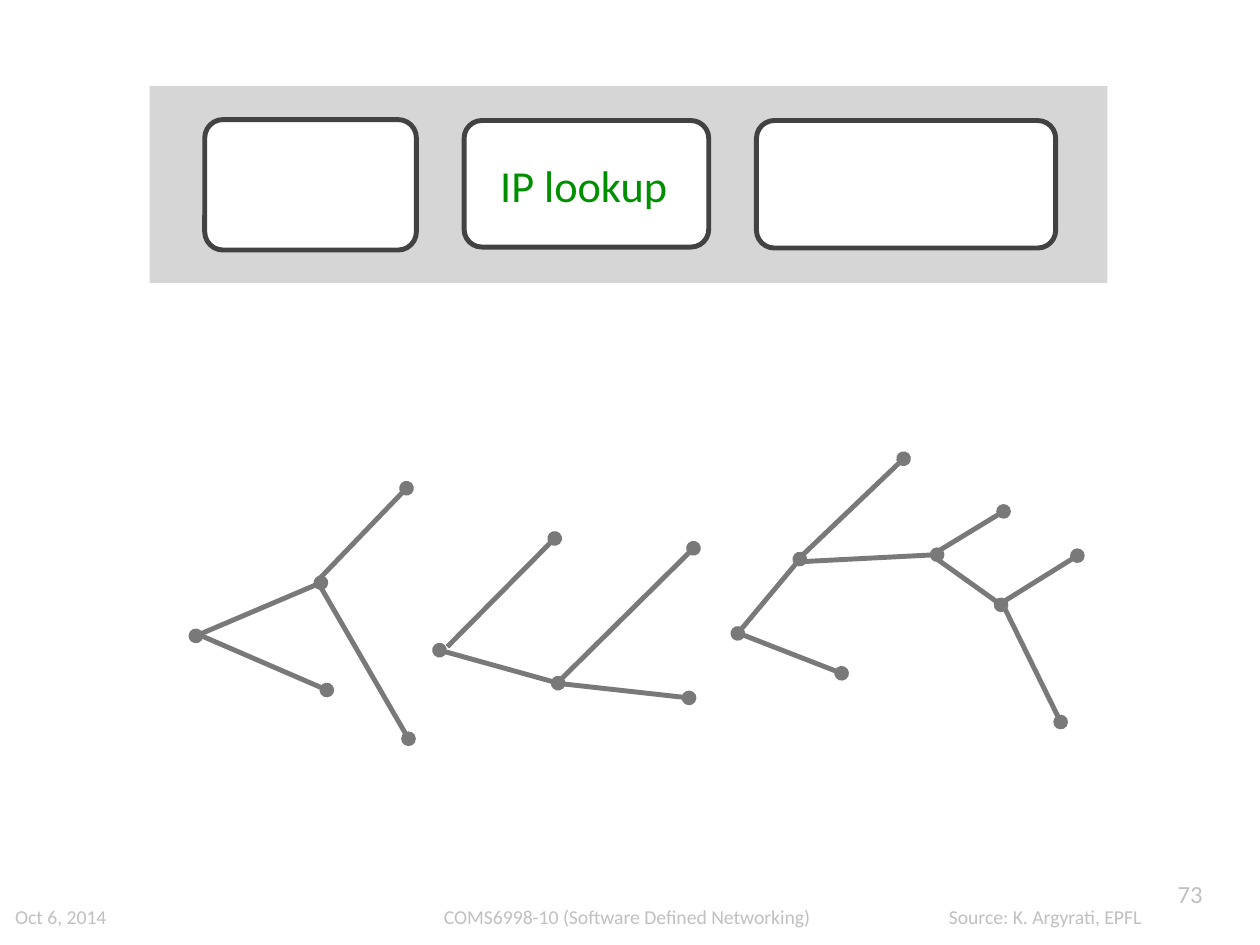
from lxml.etree import SubElement
from pptx import Presentation
from pptx.dml.color import RGBColor
from pptx.enum.shapes import MSO_CONNECTOR, MSO_SHAPE
from pptx.enum.text import MSO_ANCHOR, MSO_AUTO_SIZE, PP_ALIGN
from pptx.oxml.ns import qn
from pptx.util import Inches, Pt

COLORS = {
    "band": "D6D6D6",
    "stage": "FFFFFF",
    "outline": "424242",
    "branch": "797979",
    "lookup": "008F00",
    "footer": "C0C0C0",
}
COLUMNS, ROWS = 128, 96

deck = Presentation()
deck.slide_width, deck.slide_height = Inches(14.22), Inches(10.67)
page = deck.slides.add_slide(deck.slide_layouts[6])


def grid(*lengths):
    cells = (deck.slide_width / COLUMNS, deck.slide_height / ROWS)
    return [round(length * cells[i % 2]) for i, length in enumerate(lengths)]


def add_text(text, place, size=16, color="footer", align=PP_ALIGN.LEFT,
             anchor=MSO_ANCHOR.MIDDLE, inset=0.06, wrap=False):
    box = page.shapes.add_textbox(*grid(*place))
    frame = box.text_frame
    frame.word_wrap = wrap
    frame.auto_size = MSO_AUTO_SIZE.SHAPE_TO_FIT_TEXT
    frame.vertical_anchor = anchor
    frame.margin_left = frame.margin_right = Inches(inset)
    frame.margin_top = frame.margin_bottom = Inches(inset)
    para = frame.paragraphs[0]
    para.alignment = align
    span = para.add_run()
    span.text = text
    span.font.name = "Calibri"
    span.font.size = Pt(size)
    span.font.color.rgb = RGBColor.from_string(COLORS[color])


add_text("COMS6998-10 (Software Defined Networking)", (44.55, 91.1, 38.9, 3.95), wrap=True)
add_text("Oct 6, 2014", (1, 91.45, 13.15, 3.4))
add_text("Source: K. Argyrati, EPFL", (95.85, 91.45, 23.5, 3.4))
add_text("73", (119.05, 89.3, 3.7, 3.95), size=20, align=PP_ALIGN.CENTER,
         anchor=MSO_ANCHOR.TOP, inset=0)

band = page.shapes.add_shape(MSO_SHAPE.RECTANGLE, *grid(15.2, 8.75, 97.3, 20))
band.shadow.inherit = False
band.fill.solid()
band.fill.fore_color.rgb = RGBColor.from_string(COLORS["band"])
band.line.fill.background()

stages = [
    (20.8, 12.15, 21.5, 13.25),
    (76.85, 12.25, 30.4, 12.95),
    (47.15, 12.25, 24.85, 12.85),
]
for place in stages:
    stage = page.shapes.add_shape(MSO_SHAPE.ROUNDED_RECTANGLE, *grid(*place))
    stage.shadow.inherit = False
    stage.adjustments[0] = 0.14
    stage.fill.solid()
    stage.fill.fore_color.rgb = RGBColor.from_string(COLORS["stage"])
    stage.line.color.rgb = RGBColor.from_string(COLORS["outline"])
    stage.line.width = Pt(4)

trees = [
    [
        (32.6, 59.2, 19.9, 64.6),
        (33.2, 70.1, 19.9, 64.35),
        (41.3, 49.6, 32.3, 58.95),
        (41.5, 75.05, 32.5, 59.5),
    ],
    [
        (56.7, 69.4, 44.65, 66.05),
        (56.35, 54.7, 45.45, 65.7),
        (70.45, 55.7, 56.7, 69.3),
        (70, 70.9, 56.5, 69.4),
    ],
    [
        (81.25, 56.8, 74.95, 64.35),
        (91.8, 46.6, 81.1, 56.8),
        (95.2, 56.35, 81.65, 57.05),
        (85.5, 68.4, 75.6, 64.55),
        (101.95, 51.95, 95.05, 56.15),
        (101.7, 61.45, 95.05, 56.7),
        (107.75, 73.35, 101.9, 61.45),
        (109.45, 56.45, 102.15, 61),
    ],
]
for tree in trees:
    group = page.shapes.add_group_shape()
    for index, ends in enumerate(tree):
        branch = group.shapes.add_connector(MSO_CONNECTOR.STRAIGHT, *grid(*ends))
        branch.line.color.rgb = RGBColor.from_string(COLORS["branch"])
        branch.line.width = Pt(4)
        properties = branch.element.spPr
        line = properties.find(qn("a:ln"))
        SubElement(line, qn("a:headEnd")).set("type", "oval")
        if index == 0:
            SubElement(line, qn("a:tailEnd")).set("type", "oval")
        SubElement(properties, qn("a:effectLst"))

add_text("IP lookup", (50.2, 15.5, 18.2, 6.5), size=36, color="lookup", align=PP_ALIGN.CENTER)

deck.save("out.pptx")
